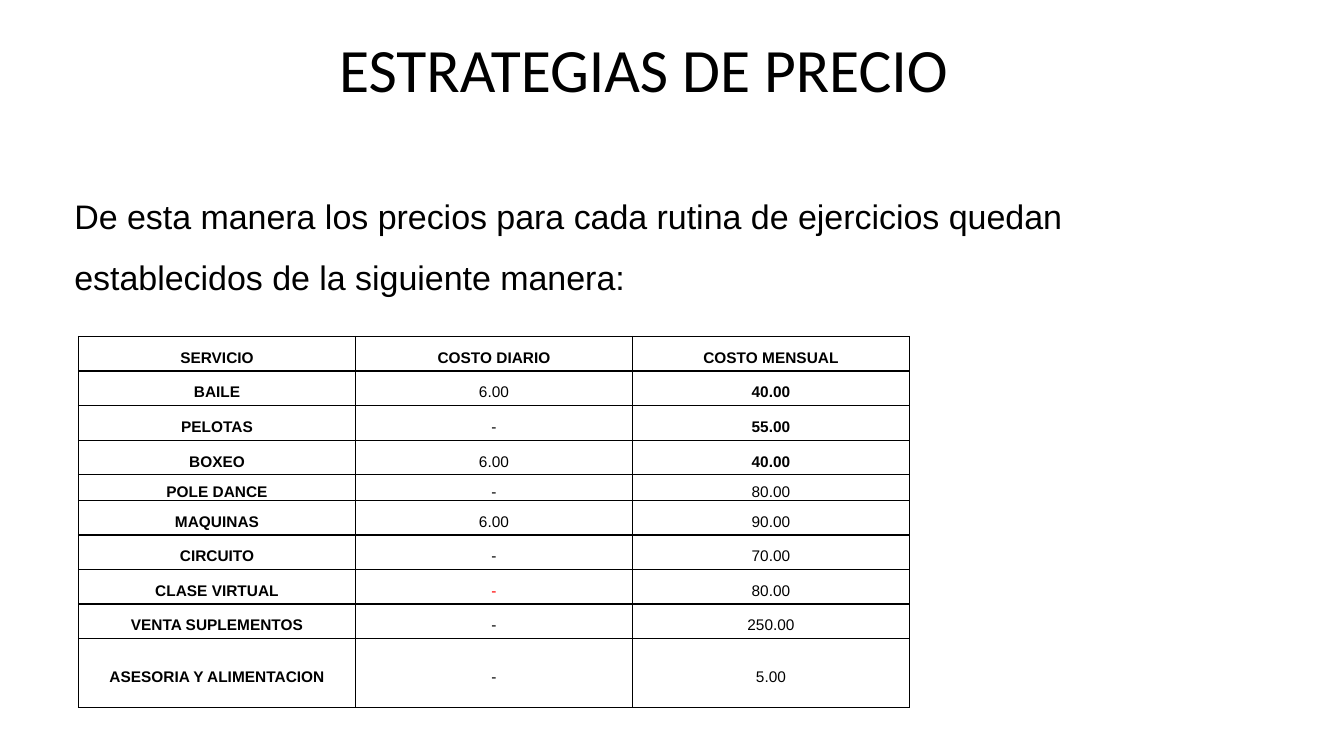
from dataclasses import dataclass

from lxml import etree
from pptx import Presentation
from pptx.dml.color import RGBColor
from pptx.enum.text import MSO_ANCHOR, MSO_AUTO_SIZE, PP_ALIGN
from pptx.oxml.ns import qn
from pptx.util import Cm, Pt

MIDDLE = MSO_ANCHOR.MIDDLE
CENTER, LEFT = PP_ALIGN.CENTER, PP_ALIGN.LEFT
NO_FIT = MSO_AUTO_SIZE.NONE


@dataclass(frozen=True)
class Theme:
    ink: str = "000000"
    alert: str = "FF0000"
    head: str = "Calibri"
    body: str = "Arial"
    title: float = 44
    intro: float = 24.3
    cell: float = 11
    rule: float = 1


theme = Theme()


def write(frame, text, font, size, align, space, color=theme.ink, bold=False):
    """Put one styled run into the frame's first paragraph and return the paragraph."""
    para = frame.paragraphs[0]
    para.alignment = align
    para.line_spacing = space
    run = para.add_run()
    run.text = text
    run.font.name = font
    run.font.size = Pt(size)
    run.font.bold = bold
    run.font.color.rgb = RGBColor.from_string(color)
    return para


def border(cell):
    props = cell._tc.get_or_add_tcPr()
    for index, side in enumerate(("a:lnL", "a:lnR", "a:lnT", "a:lnB")):
        line = etree.Element(qn(side), w=str(Pt(theme.rule)))
        fill = etree.SubElement(line, qn("a:solidFill"))
        etree.SubElement(fill, qn("a:srgbClr"), val=theme.ink)
        props.insert(index, line)


deck = Presentation()
deck.slide_width, deck.slide_height = Cm(33.87), Cm(19.05)
slide = deck.slides.add_slide(deck.slide_layouts[1])
title, intro = slide.placeholders

# Heading and introduction
for box, top, height in ((title, 0, 3.68), (intro, 4.57, 2.77)):
    box.left, box.top = Cm(1.62), Cm(top)
    box.width, box.height = Cm(29.21), Cm(height)
    box.text_frame.word_wrap = True
    box.text_frame.auto_size = NO_FIT
    box.text_frame.vertical_anchor = MIDDLE

write(title.text_frame, "ESTRATEGIAS DE PRECIO", theme.head, theme.title, CENTER, 0.9)
para = write(
    intro.text_frame,
    "De esta manera los precios para cada rutina de ejercicios quedan "
    "establecidos de la siguiente manera:",
    theme.body, theme.intro, LEFT, 1.5,
)
para.space_before = Pt(0)
para.space_after = Pt(10)
props = para._p.get_or_add_pPr()
props.set("marL", "0")
props.set("indent", "0")
etree.SubElement(props, qn("a:buNone"))

# Price table
prices = [
    ("SERVICIO", "COSTO DIARIO", "COSTO MENSUAL"),
    ("BAILE", "6.00", "40.00"),
    ("PELOTAS", "-", "55.00"),
    ("BOXEO", "6.00", "40.00"),
    ("POLE DANCE", "-", "80.00"),
    ("MAQUINAS", "6.00", "90.00"),
    ("CIRCUITO", "-", "70.00"),
    ("CLASE VIRTUAL", "-", "80.00"),
    ("VENTA SUPLEMENTOS", "-", "250.00"),
    ("ASESORIA Y ALIMENTACION", "-", "5.00"),
]
strong = {"40.00", "55.00"}
tall = {"POLE DANCE": 0.64, "ASESORIA Y ALIMENTACION": 1.74}
heights = [tall.get(row[0], 0.87) for row in prices]
width = 6.98

table = slide.shapes.add_table(
    len(prices), 3, Cm(1.98), Cm(8.48), Cm(3 * width), Cm(sum(heights))
).table
table.first_row = False
table.horz_banding = False
for col in table.columns:
    col.width = Cm(width)

for r, (row, height) in enumerate(zip(prices, heights)):
    table.rows[r].height = Cm(height)
    for c, text in enumerate(row):
        cell = table.cell(r, c)
        cell.fill.background()
        cell.vertical_anchor = MIDDLE
        cell.margin_left = cell.margin_right = Cm(0.18)
        cell.margin_top = cell.margin_bottom = 0
        bold = r == 0 or c == 0 or text in strong
        color = theme.alert if row[0] == "CLASE VIRTUAL" and c == 1 else theme.ink
        write(cell.text_frame, text, theme.body, theme.cell, CENTER, 1.5, color, bold)
        border(cell)

deck.save("out.pptx")
